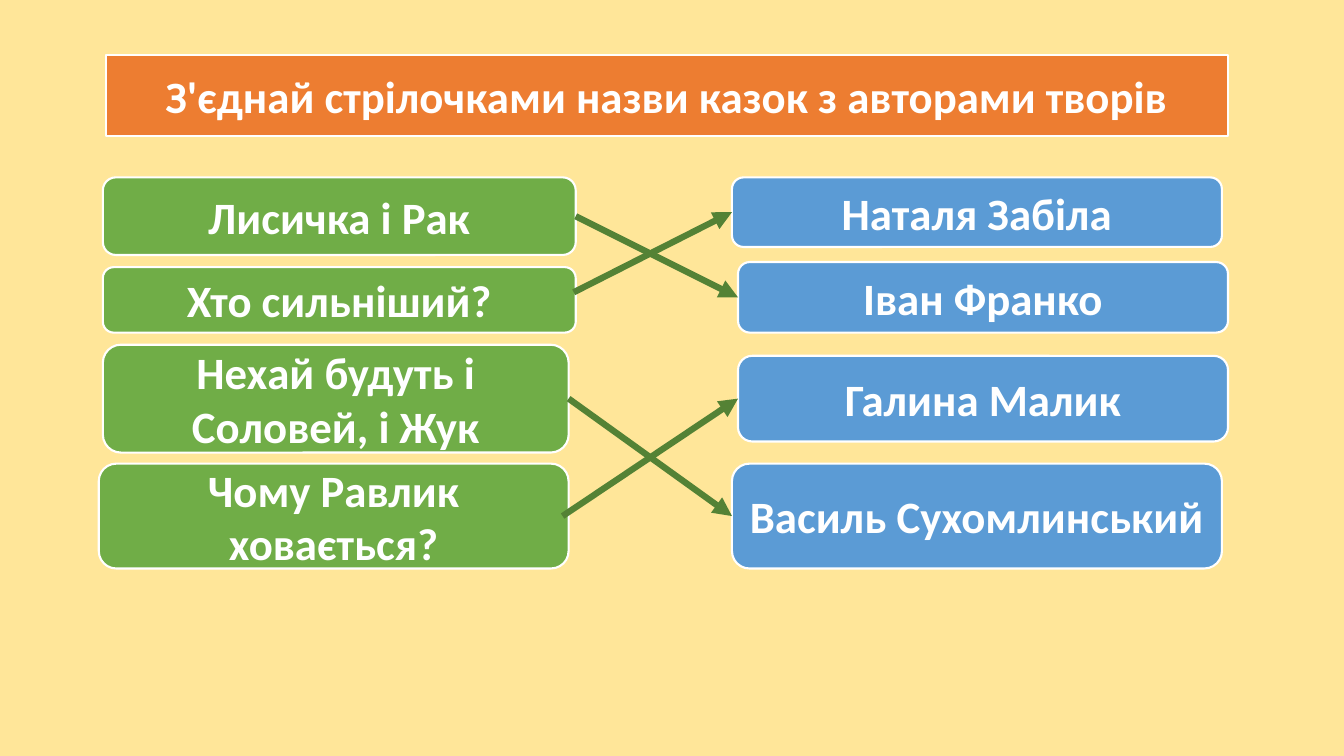
from dataclasses import dataclass

from lxml.etree import SubElement
from pptx import Presentation
from pptx.dml.color import RGBColor as Rgb
from pptx.enum.shapes import MSO_CONNECTOR as Connector, MSO_SHAPE as Preset
from pptx.enum.text import MSO_ANCHOR as Anchor, MSO_AUTO_SIZE as AutoSize, PP_ALIGN as Align
from pptx.oxml.ns import qn
from pptx.util import Inches, Pt


@dataclass(frozen=True)
class Theme:
    background: str = "FFE699"
    heading: str = "ED7D31"
    tale: str = "70AD47"
    author: str = "5B9BD5"
    arrow: str = "548235"
    light: str = "FFFFFF"
    font: str = "Calibri"
    text_size: int = 32
    outline: float = 1.5
    arrow_width: float = 4.5


THEME = Theme()
COLUMNS, ROWS = 13.33, 7.5
GRID_STEP = Inches(1)
LEFT_SIDE, RIGHT_SIDE = 1, 3

HEADING = "З'єднай стрілочками назви казок з авторами творів"
TALES = [
    ("Лисичка і Рак", (1.02, 1.76, 4.69, 0.77)),
    ("Хто сильніший?", (1.02, 2.65, 4.69, 0.65)),
    ("Нехай будуть і Соловей, і Жук", (1.02, 3.42, 4.62, 1.07)),
    ("Чому Равлик ховається?", (0.98, 4.6, 4.66, 1.04)),
]
AUTHORS = [
    ("Наталя Забіла", (7.26, 1.76, 4.86, 0.69)),
    ("Іван Франко", (7.32, 2.6, 4.86, 0.7)),
    ("Галина Малик", (7.32, 3.53, 4.86, 0.85)),
    ("Василь Сухомлинський", (7.26, 4.6, 4.86, 1.04)),
]
MATCHES = [(0, 1, None), (1, 0, (5.69, 2.9)), (2, 3, None), (3, 2, (5.58, 5.12))]


def on_grid(cells):
    return [round(cell * GRID_STEP) for cell in cells]


def style_panel(panel, text, color):
    panel.fill.solid()
    panel.fill.fore_color.rgb = Rgb.from_string(color)
    panel.line.color.rgb = Rgb.from_string(THEME.light)
    panel.line.width = Pt(THEME.outline)
    frame = panel.text_frame
    frame.word_wrap = True
    frame.auto_size = AutoSize.NONE
    frame.vertical_anchor = Anchor.MIDDLE
    paragraph = frame.paragraphs[0]
    paragraph.alignment = Align.CENTER
    run = paragraph.add_run()
    run.text = text
    run.font.name = THEME.font
    run.font.size = Pt(THEME.text_size)
    run.font.bold = True
    run.font.color.rgb = Rgb.from_string(THEME.light)


def add_heading(slide):
    heading = slide.shapes.title
    heading.left, heading.top, heading.width, heading.height = on_grid((1.05, 0.55, 11.13, 0.8))
    style_panel(heading, HEADING, THEME.heading)


def add_card(slide, text, place, color):
    card = slide.shapes.add_shape(Preset.ROUNDED_RECTANGLE, *on_grid(place))
    card.shadow.inherit = False
    style_panel(card, text, color)
    return card


def add_match(slide, tale, author, free_start):
    start = on_grid(free_start or (0, 0))
    arrow = slide.shapes.add_connector(Connector.STRAIGHT, *start, author.left, author.top)
    if free_start is None:
        arrow.begin_connect(tale, RIGHT_SIDE)
    arrow.end_connect(author, LEFT_SIDE)
    arrow.line.color.rgb = Rgb.from_string(THEME.arrow)
    arrow.line.width = Pt(THEME.arrow_width)
    SubElement(arrow.line._get_or_add_ln(), qn("a:tailEnd"), type="triangle")
    SubElement(arrow._element.spPr, qn("a:effectLst"))


def main():
    deck = Presentation()
    deck.slide_width, deck.slide_height = on_grid((COLUMNS, ROWS))
    slide = deck.slides.add_slide(deck.slide_layouts[5])
    slide.background.fill.solid()
    slide.background.fill.fore_color.rgb = Rgb.from_string(THEME.background)
    add_heading(slide)
    tales = [add_card(slide, name, place, THEME.tale) for name, place in TALES]
    authors = [add_card(slide, name, place, THEME.author) for name, place in AUTHORS]
    for tale, author, free_start in MATCHES:
        add_match(slide, tales[tale], authors[author], free_start)
    deck.save("out.pptx")


if __name__ == "__main__":
    main()
